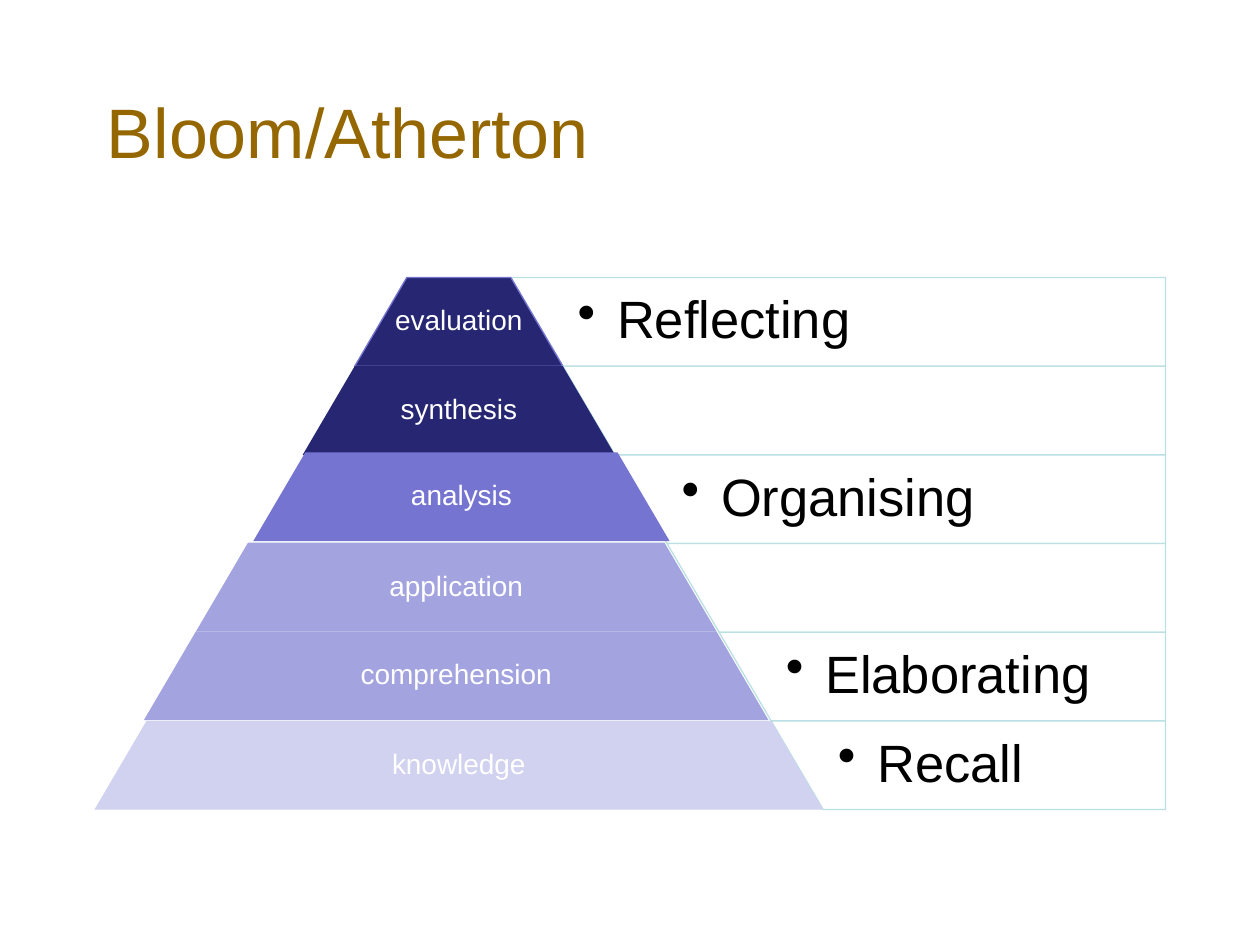
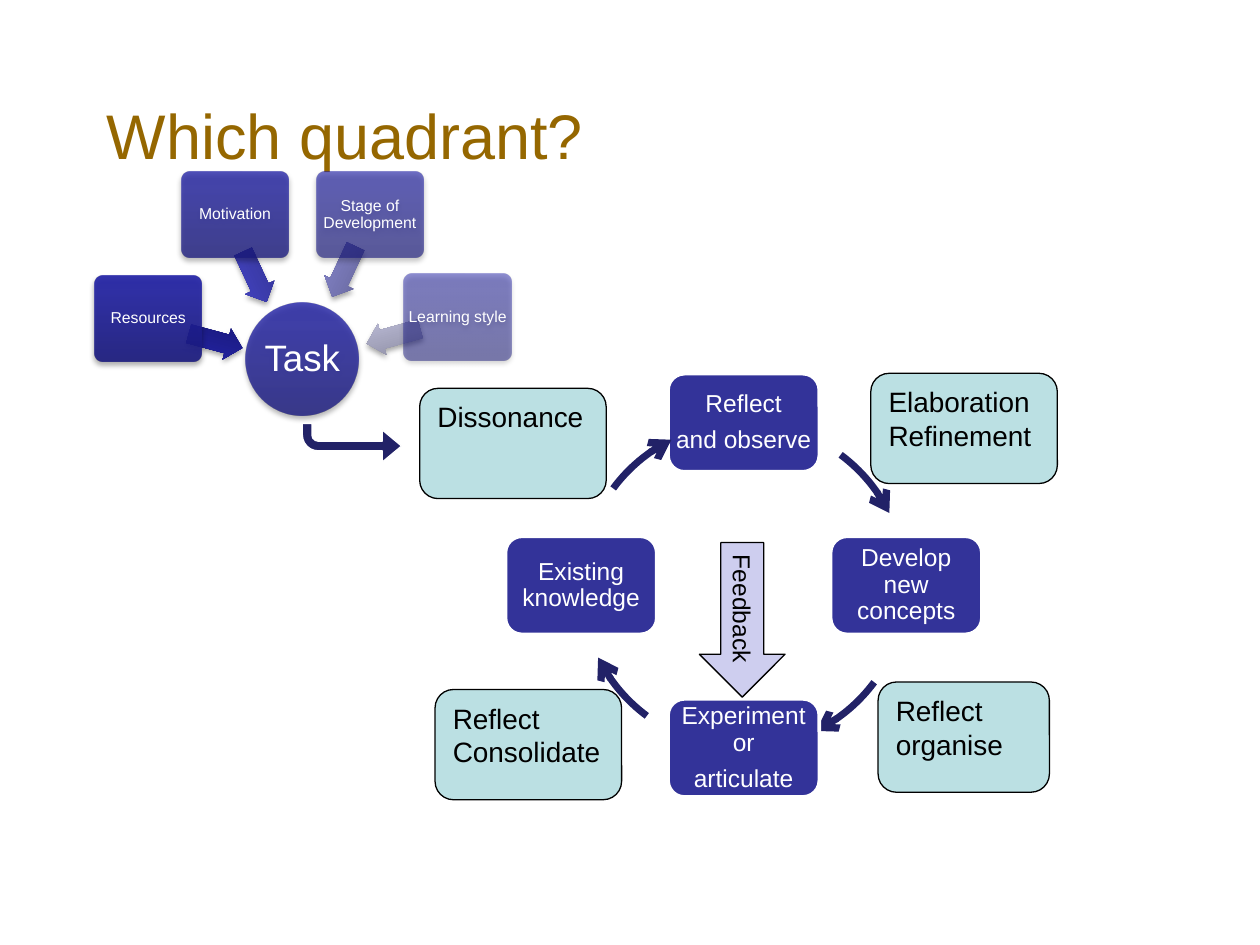
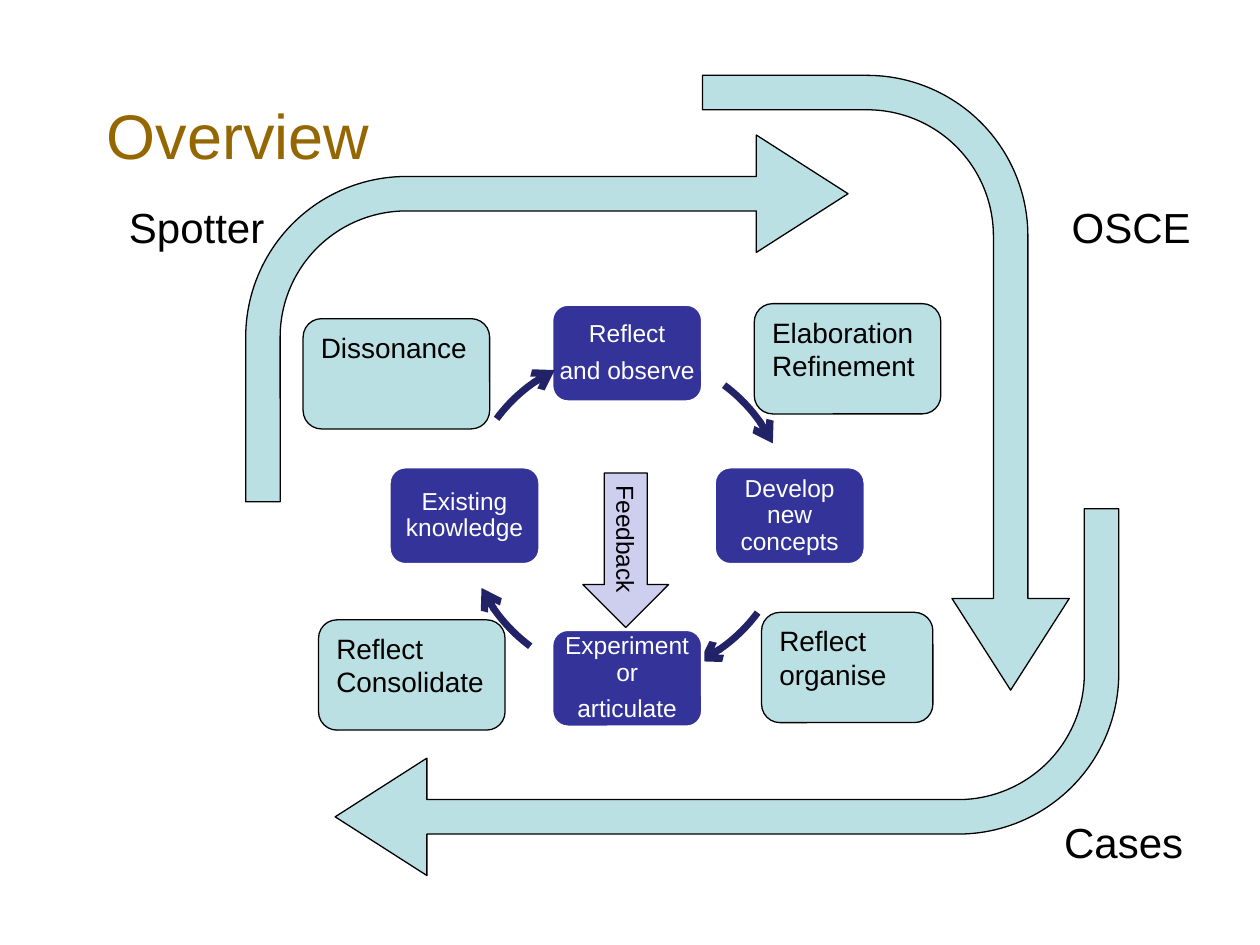
import math
from dataclasses import dataclass
from typing import NamedTuple

from pptx import Presentation
from pptx.dml.color import RGBColor
from pptx.enum.shapes import MSO_SHAPE
from pptx.enum.text import MSO_ANCHOR, PP_ALIGN
from pptx.oxml.ns import qn
from pptx.oxml.xmlchemy import OxmlElement
from pptx.util import Pt

LEFT, CENTER = PP_ALIGN.LEFT, PP_ALIGN.CENTER
TOP, MIDDLE, BOTTOM = MSO_ANCHOR.TOP, MSO_ANCHOR.MIDDLE, MSO_ANCHOR.BOTTOM
ROUNDED, OVAL = MSO_SHAPE.ROUNDED_RECTANGLE, MSO_SHAPE.OVAL
TRAPEZOID, SIDE_PANEL = MSO_SHAPE.TRAPEZOID, MSO_SHAPE.NON_ISOSCELES_TRAPEZOID
LEFT_ARROW, RIGHT_ARROW = MSO_SHAPE.LEFT_ARROW, MSO_SHAPE.RIGHT_ARROW
BENT_ARROW = MSO_SHAPE.BENT_ARROW


@dataclass(frozen=True)
class Theme:
    font: str = "Arial"
    title: str = "956700"
    black: str = "000000"
    white: str = "FFFFFF"
    aqua: str = "BBE0E3"
    lilac: str = "CECEEF"
    indigo: str = "333399"
    navy: str = "222267"
    violet: str = "7575D1"
    factor: tuple[str, ...] = ("1B1B7E", "2323A3", "2020A6")
    big_title: float = 40
    title_size: float = 36
    panel_size: float = 30
    label_size: float = 24
    task_size: float = 21
    note_size: float = 16
    step_size: float = 14
    factor_size: float = 9
    thin: float = 0.75


THEME = Theme()
DEFAULT_INSET = (7.2, 3.6)


class Box(NamedTuple):
    left: float
    top: float
    width: float
    height: float

    def shift(self, dx: float, dy: float) -> "Box":
        return self._replace(left=self.left + dx, top=self.top + dy)


@dataclass(frozen=True)
class Level:
    """One pyramid layer and the panel beside it."""
    name: str
    color: str
    panel: str = ""
    line: str | None = None
    dx: float = 0
    dy: float = 0


@dataclass(frozen=True)
class Factor:
    """A card that points at the task."""
    name: str
    left: float
    top: float
    opacity: int
    arrow_left: float
    arrow_top: float
    rotation: float
    colors: tuple[str, ...]


class Note(NamedTuple):
    text: str
    box: Box  # relative to the centre of the cycle


class Label(NamedTuple):
    text: str
    box: Box


class Sweep(NamedTuple):
    box: Box
    rotation: float


# ---- Drawing helpers ----

def child(parent, tag: str, **attrs):
    el = OxmlElement(tag)
    for key, value in attrs.items():
        el.set(key, str(value))
    parent.append(el)
    return el


def write(sp, text: str, *, size: float, color: str = THEME.black, align=LEFT,
          anchor=TOP, inset=DEFAULT_INSET, wrap: bool = True,
          spacing: float = 1, after: float = 0, bullet: float = 0) -> None:
    tf = sp.text_frame
    tf.word_wrap = wrap
    tf.vertical_anchor = anchor
    tf.margin_left = tf.margin_right = Pt(inset[0])
    tf.margin_top = tf.margin_bottom = Pt(inset[1])
    for i, line in enumerate(text.split("\n")):
        p = tf.add_paragraph() if i else tf.paragraphs[0]
        if bullet:
            pPr = p._p.get_or_add_pPr()
            pPr.set("marL", str(Pt(bullet)))
            pPr.set("indent", str(-Pt(bullet)))
            child(pPr, "a:buChar", char="•")
        p.alignment = align
        p.line_spacing = spacing
        p.space_after = Pt(after)
        r = p.add_run()
        r.text = line
        r.font.name = THEME.font
        r.font.size = Pt(size)
        r.font.color.rgb = RGBColor.from_string(color)


def add_text(slide, box: Box, text: str, **fmt) -> None:
    write(slide.shapes.add_textbox(*map(Pt, box)), text, **fmt)


def add_shape(slide, kind, box: Box, *, fill: str | None = None,
              line: str | None = None, weight: float = THEME.thin,
              adj: tuple[float, ...] = (), rotation: float = 0):
    sp = slide.shapes.add_shape(kind, *map(Pt, box))
    sp.shadow.inherit = False
    sp.rotation = rotation
    for i, value in enumerate(adj):
        sp.adjustments[i] = value
    if fill:
        sp.fill.solid()
        sp.fill.fore_color.rgb = RGBColor.from_string(fill)
    if line:
        sp.line.color.rgb = RGBColor.from_string(line)
        sp.line.width = Pt(weight)
    else:
        sp.line.fill.background()
    return sp


def add_glossy(slide, kind, box: Box, colors: tuple[str, ...], opacity: int = 100, **fmt):
    """Draw a shape with an upward gradient and a soft shadow."""
    sp = add_shape(slide, kind, box, **fmt)
    sp.fill.gradient()
    sp.fill.gradient_angle = 90
    spPr = sp._element.spPr
    stops = spPr.find(qn("a:gradFill")).find(qn("a:gsLst"))
    for gs in list(stops):
        stops.remove(gs)
    for pos, color in zip((0, 80, 100), colors):
        clr = child(child(stops, "a:gs", pos=pos * 1000), "a:srgbClr", val=color)
        child(clr, "a:alpha", val=opacity * 1000)
    shadow = child(spPr.find(qn("a:effectLst")), "a:outerShdw", blurRad=Pt(3.1),
                   dist=Pt(1.8), dir=5400000, rotWithShape=0)
    child(child(shadow, "a:srgbClr", val=THEME.black), "a:alpha", val=35000)
    return sp


def add_slide(prs, title: str, size: float = THEME.title_size):
    slide = prs.slides.add_slide(prs.slide_layouts[6])
    add_text(slide, Box(54, 30.2, 612, 72), title, size=size, color=THEME.title, anchor=BOTTOM)
    return slide


# ---- Pyramid ----

LEVELS = (
    Level("evaluation", "262673", "Reflecting", line=THEME.violet),
    Level("synthesis", "262673"),
    Level("analysis", THEME.violet, "Organising", dx=1.5, dy=-1.4),
    Level("application", "A3A3E0", dx=-1.5, dy=-0.5),
    Level("comprehension", "A3A3E0", "Elaborating", dx=-1.5, dy=-0.5),
    Level("knowledge", "D1D1F0", "Recall"),
)


def draw_pyramid(slide) -> None:
    top, row, slope = 158.6, 50.67, 0.587
    axis, right = 262.2, 666
    slant = row * slope
    for i, level in enumerate(LEVELS):
        y = top + i * row
        x = axis + (i + 1) * slant
        panel = Box(x, y, right - x, row)
        sp = add_shape(slide, SIDE_PANEL, panel, fill=THEME.white, line=THEME.aqua,
                       adj=(0, slope), rotation=180)
        child(sp._element.spPr.find(qn("a:solidFill"))[0], "a:alpha", val=90000)
        if level.panel:
            add_text(slide, Box(x + slant, y, right - x - slant, row), level.panel,
                     size=THEME.panel_size, anchor=MIDDLE, inset=(8.4, 8.4),
                     spacing=0.9, bullet=22.5)
        width = 2 * slant * (i + 2)
        layer = Box(axis - width / 2, y, width, row).shift(level.dx, level.dy)
        add_shape(slide, TRAPEZOID, layer, fill=level.color, line=level.line, adj=(slope,))
        label = layer._replace(left=layer.left + width * 0.175, width=width * 0.65)
        add_text(slide, label, level.name, size=THEME.note_size, color=THEME.white,
                 align=CENTER, anchor=MIDDLE, inset=(1.6, 1.6), spacing=0.9)


# ---- Learning cycle ----

STEPS = ("Reflect\nand observe", "Develop new concepts",
         "Experiment or\narticulate", "Existing knowledge")
NOTES = (
    Note("Reflect\nConsolidate", Box(-176.4, 59.5, 106.6, 63)),
    Note("Elaboration\nRefinement", Box(72.6, -121.2, 106.6, 63)),
    Note("Dissonance", Box(-185.2, -112.6, 106.6, 63)),
)
ORGANISE = Note("Reflect\norganise", Box(76.8, 55.2, 97.9, 63))
FEEDBACK = Note("Feedback", Box(-45, -4.8, 88.3, 49))
RADIUS = 92.9
STEP_W, STEP_H = 86.4, 56


def draw_arc(slide, cx: float, cy: float, start: float, end: float) -> None:
    """Draw an arrow along the cycle's circle, with angles in degrees."""
    count = 16
    points = []
    for i in range(count + 1):
        a = math.radians(start + (end - start) * i / count)
        points.append((Pt(cx + RADIUS * math.cos(a)), Pt(cy + RADIUS * math.sin(a))))
    builder = slide.shapes.build_freeform(*points[0])
    builder.add_line_segments(points[1:], close=False)
    sp = builder.convert_to_shape()
    sp.shadow.inherit = False
    sp.fill.background()
    sp.line.color.rgb = RGBColor.from_string(THEME.navy)
    sp.line.width = Pt(4)
    child(sp.line._get_or_add_ln(), "a:tailEnd", type="arrow")


def draw_note(slide, note: Note, cx: float, cy: float) -> None:
    sp = add_shape(slide, ROUNDED, note.box.shift(cx, cy), fill=THEME.aqua,
                   line=THEME.black, adj=(0.167,))
    write(sp, note.text, size=THEME.note_size)


def draw_cycle(slide, cx: float, cy: float) -> None:
    for i, text in enumerate(STEPS):
        angle = 90 * i - 90
        x = cx + RADIUS * math.cos(math.radians(angle))
        y = cy + RADIUS * math.sin(math.radians(angle))
        sp = add_shape(slide, ROUNDED, Box(x - STEP_W / 2, y - STEP_H / 2, STEP_W, STEP_H),
                       fill=THEME.indigo, line=THEME.white, weight=2)
        write(sp, text, size=THEME.step_size, color=THEME.white, align=CENTER,
              anchor=MIDDLE, inset=(1, 1), spacing=0.9, after=5.5)
        draw_arc(slide, cx, cy, angle + 36.6, angle + 63.6)
    draw_note(slide, ORGANISE, cx, cy)
    sp = add_shape(slide, RIGHT_ARROW, FEEDBACK.box.shift(cx, cy), fill=THEME.lilac,
                   line=THEME.black, rotation=90)
    write(sp, FEEDBACK.text, size=THEME.step_size)
    for note in NOTES:
        draw_note(slide, note, cx, cy)


# ---- Task and its factors ----

FACTORS = (
    Factor("Resources", 54, 157.5, 90, 107.3, 185.6, 195, ("191978", "21219C", "1F1F9F")),
    Factor("Motivation", 103.6, 98, 77, 129.8, 149, 245, ("333392", "4242BE", "4040C1")),
    Factor("Stage of Development", 180.7, 98, 63, 180.7, 146, 295,
           ("636396", "8080C3", "8080C5")),
    Factor("Learning style", 230.8, 156.6, 50, 209, 183, 344.5,
           ("8C8CA1", "B6B6D1", "B6B6D2")),
)


def draw_task(slide) -> None:
    fmt = dict(color=THEME.white, align=CENTER, anchor=MIDDLE, inset=(0, 0), spacing=0.9)
    sp = add_glossy(slide, OVAL, Box(140.6, 173.2, 64.4, 64.4), THEME.factor, 80)
    write(sp, "Task", size=THEME.task_size, wrap=False, **fmt)
    for f in FACTORS:
        add_glossy(slide, LEFT_ARROW, Box(f.arrow_left, f.arrow_top, 31.7, 18.3), f.colors,
                   adj=(0.6, 0.5), rotation=f.rotation)
        sp = add_glossy(slide, ROUNDED, Box(f.left, f.top, 61.4, 49.2), THEME.factor,
                        f.opacity, adj=(0.1,))
        write(sp, f.name, size=THEME.factor_size, **fmt)
    sp = add_shape(slide, BENT_ARROW, Box(172.8, 242, 56.7, 22), fill=THEME.navy,
                   line=THEME.white, adj=(0.25, 0.416, 0.5, 0.411), rotation=180)
    sp._element.spPr.find(qn("a:xfrm")).set("flipH", "1")


# ---- Assessment arrows ----

SWEEPS = (
    Sweep(Box(140.4, 77.2, 344.2, 209.6), 0),
    Sweep(Box(330.6, 113.9, 351.3, 209.6), 90),
    Sweep(Box(191.5, 290.7, 447.8, 209.6), 180),
)
LABELS = (
    Label("Spotter", Box(66.6, 111.8, 92.9, 36)),
    Label("OSCE", Box(605.3, 111.8, 83.5, 36)),
    Label("Cases", Box(601, 463.2, 83.5, 36)),
)


def draw_assessments(slide) -> None:
    for sweep in SWEEPS:
        add_shape(slide, BENT_ARROW, sweep.box, fill=THEME.aqua, line=THEME.black,
                  adj=(0.094, 0.16, 0.25, 0.438), rotation=sweep.rotation)
    for label in LABELS:
        add_text(slide, label.box, label.text, size=THEME.label_size, wrap=False)


def main() -> None:
    prs = Presentation()
    prs.slide_width, prs.slide_height = Pt(720), Pt(540)

    draw_pyramid(add_slide(prs, "Bloom/Atherton", THEME.big_title))

    slide = add_slide(prs, "Which quadrant?")
    draw_cycle(slide, 425, 334.5)
    draw_task(slide)

    slide = add_slide(prs, "Overview")
    draw_cycle(slide, 358.4, 294.7)
    draw_assessments(slide)

    prs.save("out.pptx")


if __name__ == "__main__":
    main()
